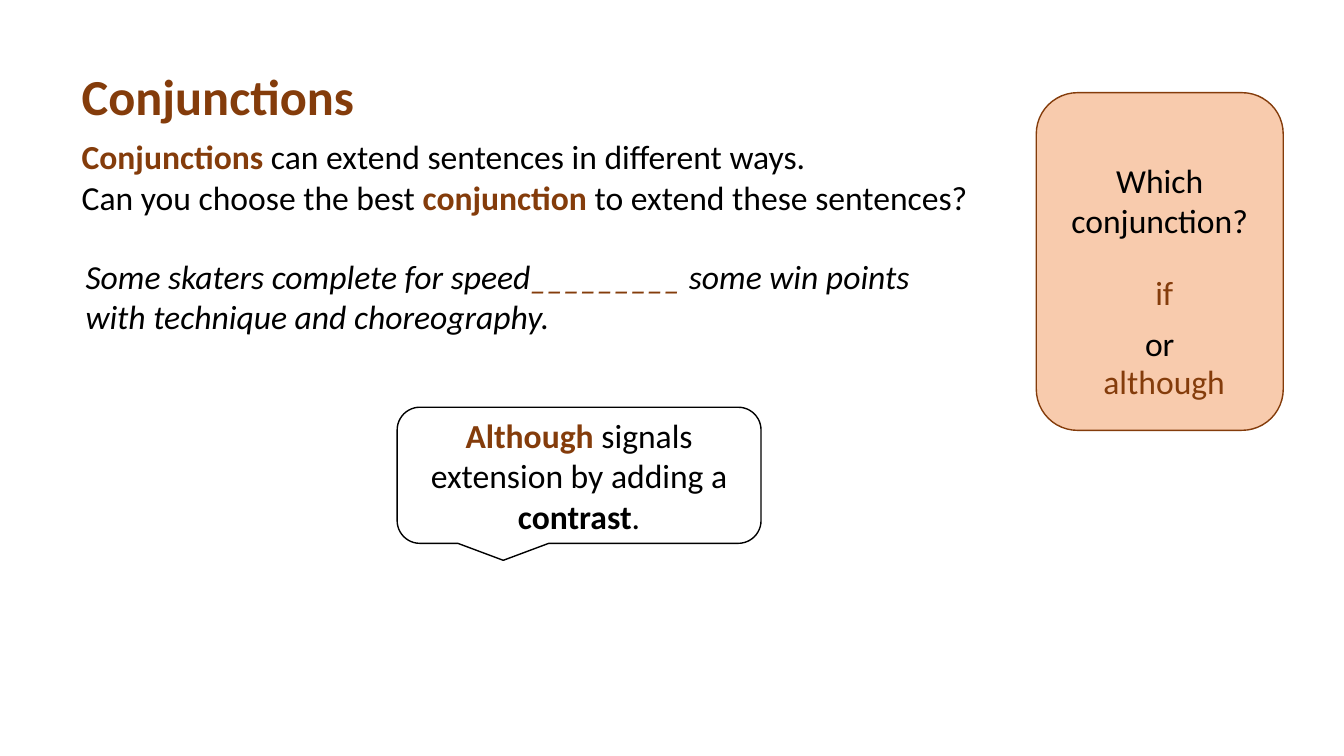
from lxml.etree import SubElement
from pptx import Presentation
from pptx.dml.color import RGBColor
from pptx.enum.shapes import MSO_SHAPE
from pptx.enum.text import MSO_ANCHOR, MSO_AUTO_SIZE, PP_ALIGN
from pptx.oxml.ns import qn
from pptx.util import Pt

BROWN, PEACH, BLACK = "843C0B", "F8CBAD", "000000"


def paint(color, value):
    color.rgb = RGBColor.from_string(value)


def write(shape, *lines, size=24, align=PP_ALIGN.LEFT, anchor=MSO_ANCHOR.TOP,
          italic=False, wrap=True, gap=0):
    frame = shape.text_frame
    frame.auto_size = MSO_AUTO_SIZE.NONE
    frame.word_wrap = wrap
    frame.vertical_anchor = anchor
    for row, line in enumerate(lines):
        para = frame.add_paragraph() if row else frame.paragraphs[0]
        para.alignment = align
        para.space_before = Pt(gap if row else 0)
        for words, color, bold in line:
            run = para.add_run()
            run.text = words
            font = run.font
            font.name, font.size = "Calibri", Pt(size)
            font.bold, font.italic = bold, italic
            paint(font.color, color)


def place(shape, *box):
    shape.left, shape.top, shape.width, shape.height = map(Pt, box)
    return shape


def plain(shape):
    for para in shape.text_frame.paragraphs:
        props = para._p.get_or_add_pPr()
        props.set("marL", "0")
        props.set("indent", "0")
        SubElement(props, qn("a:buNone"))


def label(slide, box, *lines, **style):
    write(slide.shapes.add_textbox(*map(Pt, box)), *lines, **style)


def panel(slide, kind, box, *lines, edge, fill=None, **style):
    shape = slide.shapes.add_shape(kind, *map(Pt, box))
    shape.shadow.inherit = False
    if fill:
        shape.fill.solid()
        paint(shape.fill.fore_color, fill)
    else:
        shape.fill.background()
    paint(shape.line.color, edge)
    shape.line.width = Pt(1)
    write(shape, *lines, align=PP_ALIGN.CENTER, anchor=MSO_ANCHOR.MIDDLE, **style)


def main():
    deck = Presentation()
    deck.slide_width, deck.slide_height = Pt(960), Pt(540)
    slide = deck.slides.add_slide(deck.slide_layouts[1])

    panel(slide, MSO_SHAPE.ROUNDED_RECTANGLE, (740.2, 66.2, 176.4, 241.2),
          [("Which conjunction?", BLACK, False)], [("or", BLACK, False)],
          edge=BROWN, fill=PEACH, gap=58.6)

    title = place(slide.shapes.title, 51.1, 43.2, 832.3, 51.1)
    write(title, [("Conjunctions", BROWN, True)], size=36)

    intro = place(slide.placeholders[1], 51.1, 93.6, 807.8, 65.5)
    write(intro,
          [("Conjunctions", BROWN, True),
           (" can extend sentences in different ways.", BLACK, False)],
          [("Can you choose the best ", BLACK, False),
           ("conjunction", BROWN, True),
           (" to extend these sentences?", BLACK, False)])
    plain(intro)

    label(slide, (54, 179.3, 647.3, 65.5),
          [("Some skaters complete for speed", BLACK, False),
           ("_________ ", BROWN, False),
           ("some win points with technique and choreography.", BLACK, False)],
          italic=True)

    for word, box in (("although", (780.5, 254.2, 102.2, 36)),
                      ("if", (817.9, 190.8, 27.4, 36))):
        label(slide, box, [(word, BROWN, False)],
              align=PP_ALIGN.CENTER, wrap=False)

    panel(slide, MSO_SHAPE.ROUNDED_RECTANGULAR_CALLOUT, (283.7, 290.9, 259.9, 97.2),
          [("Although", BROWN, True),
           (" signals extension by adding a ", BLACK, False),
           ("contrast", BLACK, True), (".", BLACK, False)],
          edge=BLACK)

    deck.save("out.pptx")


if __name__ == "__main__":
    main()
